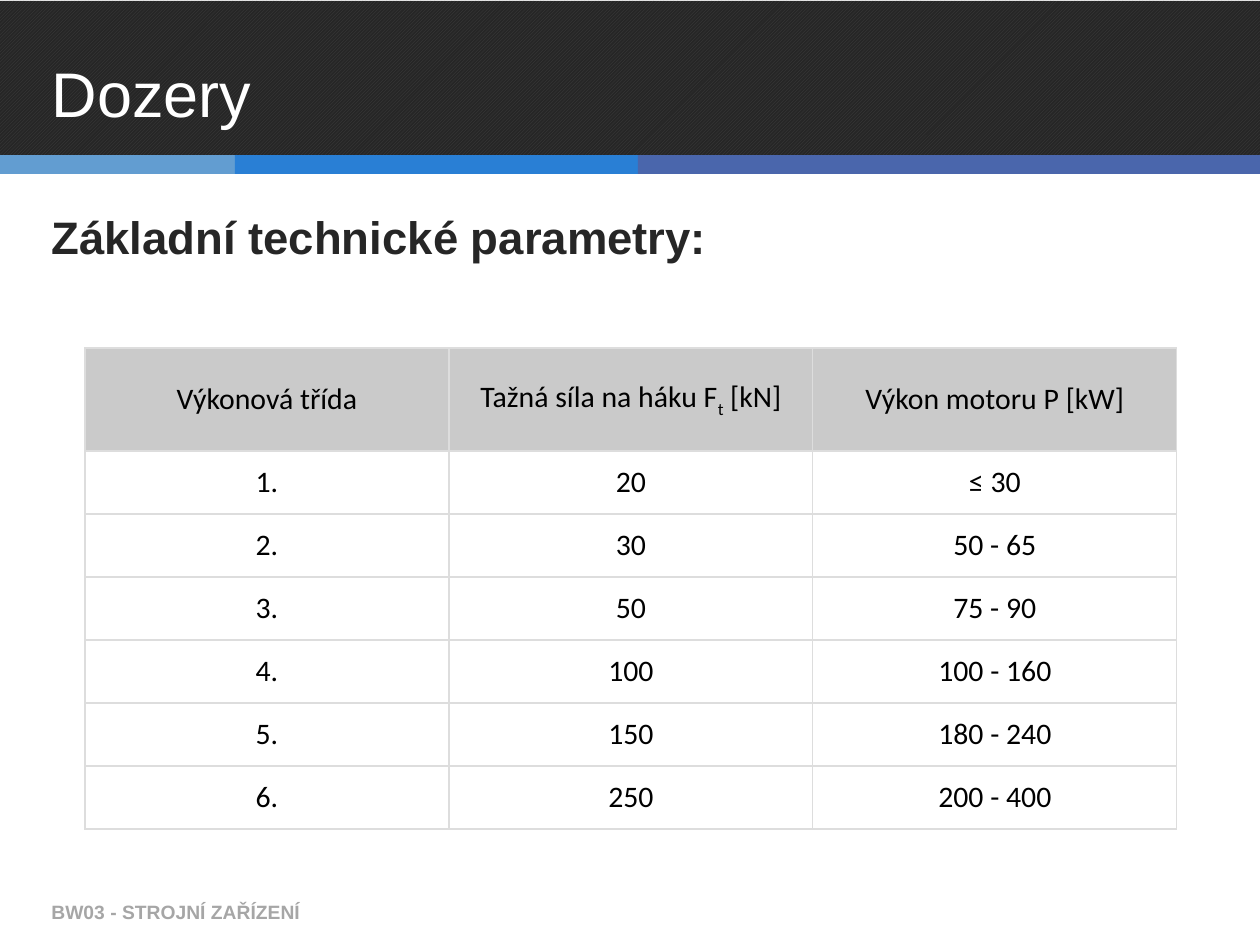
from lxml.etree import SubElement
from pptx import Presentation
from pptx.dml.color import RGBColor
from pptx.enum.dml import MSO_PATTERN as Pattern
from pptx.enum.shapes import MSO_SHAPE as Shape
from pptx.enum.text import MSO_ANCHOR as Anchor, MSO_AUTO_SIZE as Fit, PP_ALIGN as Align
from pptx.oxml.ns import qn
from pptx.util import Emu, Pt

# Content
TITLE = "Dozery"
HEADING = "Základní technické parametry:"
FOOTER = "BW03 - STROJNÍ ZAŘÍZENÍ"
ROWS = [
    ("Výkonová třída", ("Tažná síla na háku F", "t", "\u00a0[kN]"), "Výkon motoru P [kW]"),
    ("1.", "20", "≤ 30"),
    ("2.", "30", "50 - 65"),
    ("3.", "50", "75 - 90"),
    ("4.", "100", "100 - 160"),
    ("5.", "150", "180 - 240"),
    ("6.", "250", "200 - 400"),
]

# Colours
WHITE = RGBColor(0xFF, 0xFF, 0xFF)
BLACK = RGBColor(0x00, 0x00, 0x00)
DARK = RGBColor(0x26, 0x26, 0x26)
HATCH = RGBColor(0x40, 0x40, 0x40)
MUTED = RGBColor(0xA6, 0xA6, 0xA6)
HEAD = RGBColor(0xCA, 0xCA, 0xCA)
RULE = RGBColor(0xDD, 0xDD, 0xDD)
STRIPES = [  # width in px, colour
    (235, RGBColor(0x62, 0x9D, 0xD1)),
    (403, RGBColor(0x29, 0x7F, 0xD5)),
    (622, RGBColor(0x4A, 0x66, 0xAC)),
]

# Sizes in px
WIDTH, HEIGHT = 1260, 945
LEFT, TEXT_W = 39, 1182
COL_W, HEAD_H, ROW_H = 364, 103, 63
PAD = 10


def px(n):
    return Emu(round(n * 914400 / 126))


def box(*sides):
    return [px(n) for n in sides]


def style(par, size, color, font="Arial", bold=False):
    for run in par.runs:
        run.font.size = Pt(size)
        run.font.name = font
        run.font.bold = bold
        run.font.color.rgb = color


def add_bar(slide, *sides):
    bar = slide.shapes.add_shape(Shape.RECTANGLE, *box(*sides))
    bar.shadow.inherit = False
    bar.line.fill.background()
    return bar


def add_label(slide, text, sides, anchor, size, color):
    frame = slide.shapes.add_textbox(*box(*sides)).text_frame
    frame.word_wrap = True
    frame.vertical_anchor = anchor
    frame.text = text
    style(frame.paragraphs[0], size, color, bold=True)
    return frame.paragraphs[0]


def add_borders(cell):
    props = cell._tc.get_or_add_tcPr()
    for i, side in enumerate(("a:lnL", "a:lnR", "a:lnT", "a:lnB")):
        line = props.makeelement(qn(side), {"w": str(Pt(0.75))})
        fill = SubElement(line, qn("a:solidFill"))
        SubElement(fill, qn("a:srgbClr"), val=str(RULE))
        props.insert(i, line)


def fill_cell(cell, value, color):
    cell.fill.solid()
    cell.fill.fore_color.rgb = color
    cell.vertical_anchor = Anchor.MIDDLE
    cell.margin_left = cell.margin_right = px(PAD)
    cell.margin_top = cell.margin_bottom = px(PAD)
    par = cell.text_frame.paragraphs[0]
    par.alignment = Align.CENTER
    if isinstance(value, tuple):
        for part in value:
            par.add_run().text = part
        par.runs[1].font._element.set("baseline", "-25000")
    else:
        par.text = value
    style(par, 17, BLACK, "Calibri")
    add_borders(cell)


def main():
    prs = Presentation()
    prs.slide_width, prs.slide_height = box(WIDTH, HEIGHT)
    slide = prs.slides.add_slide(prs.slide_layouts[5])

    # Header band and stripes
    band = add_bar(slide, 0, 1, WIDTH, 156)
    band.fill.patterned()
    band.fill.pattern = Pattern.DARK_UPWARD_DIAGONAL
    band.fill.fore_color.rgb = HATCH
    band.fill.back_color.rgb = DARK
    x = 0
    for width, color in STRIPES:
        bar = add_bar(slide, x, 155, width, 19)
        bar.fill.solid()
        bar.fill.fore_color.rgb = color
        x += width

    # Title, brought in front of the band
    title = slide.shapes.title
    slide.shapes.element.append(title.element)
    title.left, title.top, title.width, title.height = box(LEFT, 25, TEXT_W, 134)
    frame = title.text_frame
    frame.text = TITLE
    frame.auto_size = Fit.NONE
    frame.vertical_anchor = Anchor.MIDDLE
    frame.paragraphs[0].alignment = Align.LEFT
    style(frame.paragraphs[0], 36, WHITE)

    # Footer and heading
    add_label(slide, FOOTER, (LEFT, 887, 844, 50), Anchor.MIDDLE, 11, MUTED)
    par = add_label(slide, HEADING, (LEFT, 213, TEXT_W, 643), Anchor.TOP, 26, DARK)
    par.line_spacing = 0.81
    par.space_before = Pt(20)

    # Table
    cols = len(ROWS[0])
    high = HEAD_H + ROW_H * (len(ROWS) - 1)
    sides = box(85, 348, COL_W * cols, high)
    table = slide.shapes.add_table(len(ROWS), cols, *sides).table
    for col in table.columns:
        col.width = px(COL_W)
    for r, row in enumerate(ROWS):
        table.rows[r].height = px(ROW_H if r else HEAD_H)
        for c, value in enumerate(row):
            fill_cell(table.cell(r, c), value, WHITE if r else HEAD)

    prs.save("out.pptx")


if __name__ == "__main__":
    main()
